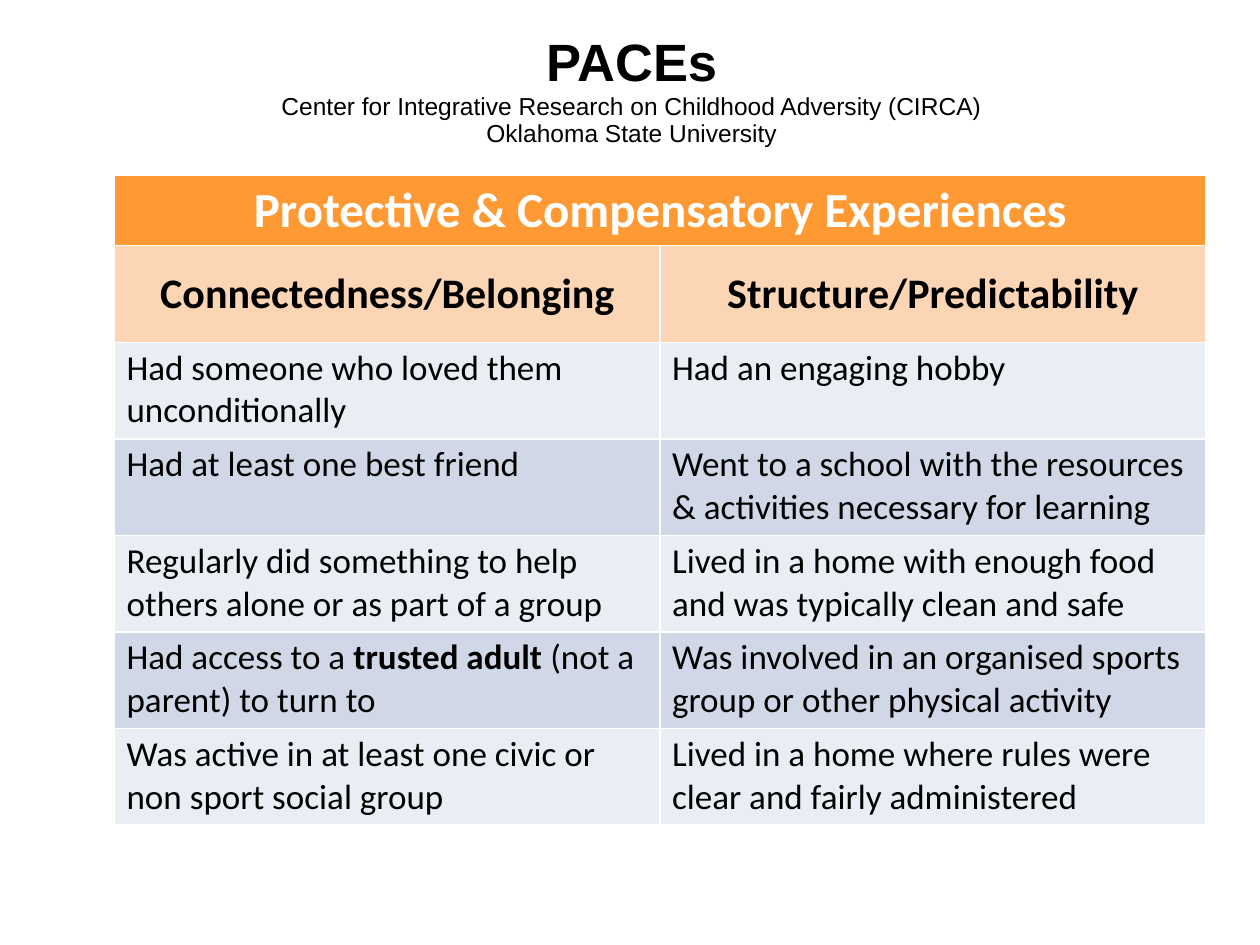
from lxml import etree
from pptx import Presentation
from pptx.dml.color import RGBColor
from pptx.enum.text import MSO_ANCHOR, MSO_AUTO_SIZE, PP_ALIGN
from pptx.oxml.ns import qn
from pptx.util import Pt

MID, TOP = MSO_ANCHOR.MIDDLE, MSO_ANCHOR.TOP
LEFT, MIDST = PP_ALIGN.LEFT, PP_ALIGN.CENTER
FIXED = MSO_AUTO_SIZE.NONE

NAME = "PACEs"
SOURCE = [
    "Center for Integrative Research on Childhood Adversity (CIRCA)",
    "Oklahoma State University",
]
BANNER = "Protective & Compensatory Experiences"
HEADS = ("Connectedness/Belonging", "Structure/Predictability")
ITEMS = [
    ("Had someone who loved them unconditionally", "Had an engaging hobby"),
    ("Had at least one best friend",
     "Went to a school with the resources & activities necessary for learning"),
    ("Regularly did something to help others alone or as part of a group",
     "Lived in a home with enough food and was typically clean and safe"),
    (["Had access to a ", ("trusted adult ", True), "(not a parent) to turn to"],
     "Was involved in an organised sports group or other physical activity"),
    ("Was active in at least one civic or non sport social group",
     "Lived in a home where rules were clear and fairly administered"),
]
BANDS = ("E9EDF4", "D0D8E8")
X, Y, WIDE = 65.5, 100.4, 623.5
FIRST, REST = 40, 55.2


def color(code):
    return RGBColor.from_string(code)


def write(par, text, size=20, font="Calibri", ink="000000", bold=False, align=LEFT):
    par.alignment = align
    for part in [text] if isinstance(text, str) else text:
        words, heavy = (part, bold) if isinstance(part, str) else part
        run = par.add_run()
        run.text = words
        run.font.size = Pt(size)
        run.font.name = font
        run.font.bold = heavy
        run.font.color.rgb = color(ink)


def edge(cell):
    props = cell._tc.get_or_add_tcPr()
    for spot, side in enumerate(("a:lnL", "a:lnR", "a:lnT", "a:lnB")):
        line = etree.Element(qn(side), w=str(Pt(1)))
        fill = etree.SubElement(line, qn("a:solidFill"))
        etree.SubElement(fill, qn("a:srgbClr"), val="FFFFFF")
        props.insert(spot, line)


def paint(cell, text, fill, anchor=MID, **style):
    cell.fill.solid()
    cell.fill.fore_color.rgb = color(fill)
    cell.vertical_anchor = anchor
    cell.margin_left = cell.margin_right = Pt(6.85)
    cell.margin_top = cell.margin_bottom = Pt(2.5)
    edge(cell)
    write(cell.text_frame.paragraphs[0], text, **style)


def add_title(slide):
    title = slide.shapes.title
    title.left, title.top, title.width, title.height = Pt(36), Pt(9.4), Pt(650), Pt(85.7)
    frame = title.text_frame
    frame.word_wrap = True
    frame.auto_size = FIXED
    frame.vertical_anchor = MID
    par = frame.paragraphs[0]
    par.line_spacing = 0.93
    write(par, NAME, size=30, font="Arial", bold=True, align=MIDST)
    for line in SOURCE:
        par.add_line_break()
        write(par, line, size=14, font="Arial", align=MIDST)


def add_grid(slide):
    count = len(ITEMS) + 2
    high = FIRST + REST * (count - 1)
    grid = slide.shapes.add_table(count, 2, Pt(X), Pt(Y), Pt(WIDE), Pt(high)).table
    for col in grid.columns:
        col.width = Pt(WIDE / 2)
    for i, row in enumerate(grid.rows):
        row.height = Pt(REST if i else FIRST)
    grid.cell(0, 0).merge(grid.cell(0, 1))
    paint(grid.cell(0, 0), BANNER, "FF9933", size=28, ink="FFFFFF", bold=True, align=MIDST)
    for j, head in enumerate(HEADS):
        paint(grid.cell(1, j), head, "FCD5B5", size=24, bold=True, align=MIDST)
    for i, pair in enumerate(ITEMS):
        for j, text in enumerate(pair):
            paint(grid.cell(i + 2, j), text, BANDS[i % 2], anchor=TOP)


def main():
    deck = Presentation()
    deck.slide_width, deck.slide_height = Pt(720), Pt(540)
    slide = deck.slides.add_slide(deck.slide_layouts[5])
    add_grid(slide)
    add_title(slide)
    deck.save("out.pptx")


if __name__ == "__main__":
    main()
